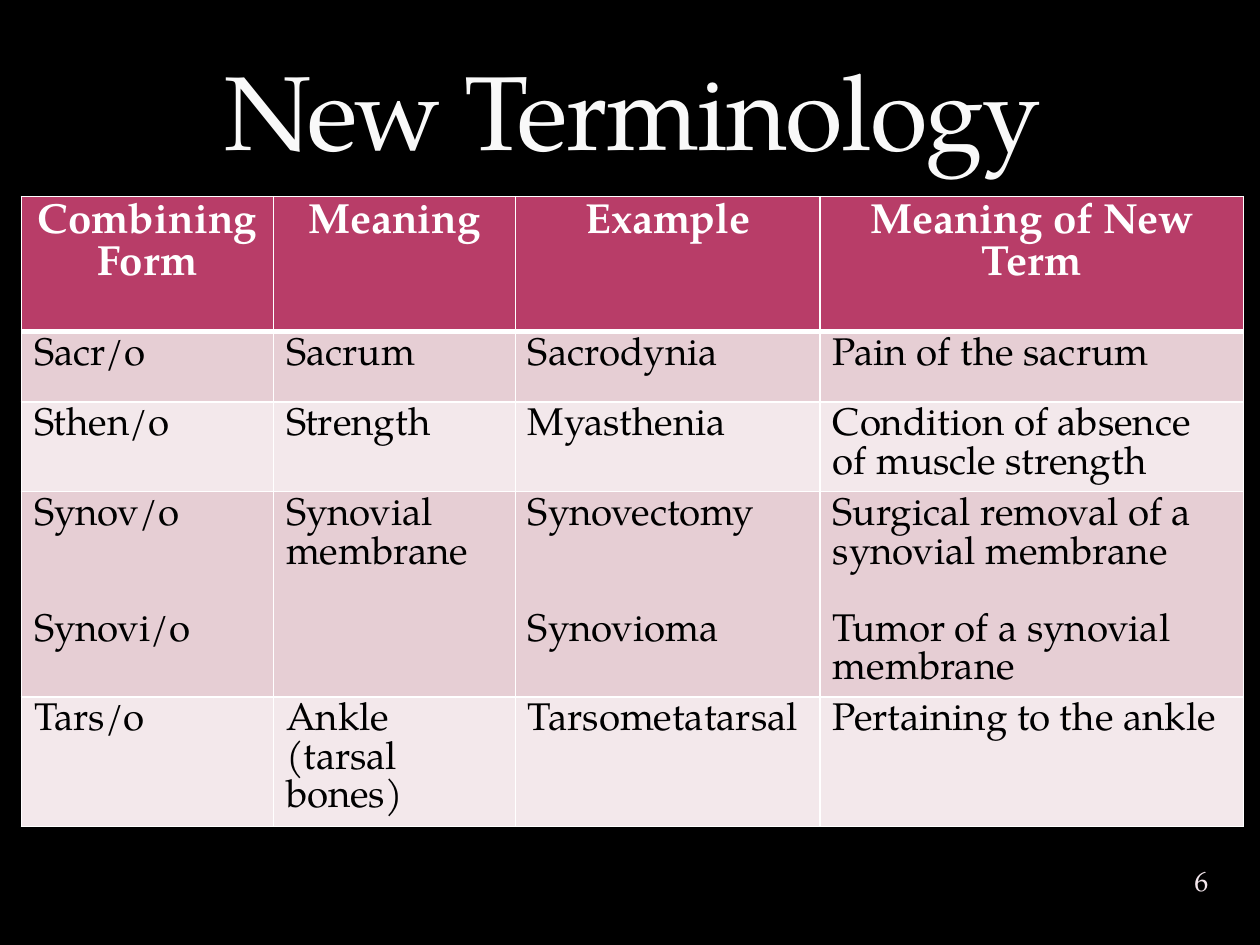
from pptx import Presentation, util as u
from pptx.dml.color import RGBColor
from pptx.enum import text
from pptx.oxml import parse_xml
from pptx.oxml.ns import nsdecls

HEAD = ["Combining Form", "Meaning", "Example", "Meaning of New Term"]
ROWS = [
    ["Sacr/o", "Sacrum", "Sacrodynia", "Pain of the sacrum"],
    ["Sthen/o", "Strength", "Myasthenia", "Condition of absence of muscle strength"],
    [("Synov/o", "Synovi/o", 2), "Synovial membrane",
     ("Synovectomy", "Synovioma", 2),
     ("Surgical removal of a synovial membrane", "Tumor of a synovial membrane", 1)],
    ["Tars/o", "Ankle (tarsal bones)", "Tarsometatarsal", "Pertaining to the ankle"],
]
COLS = [2, 1.92, 2.42, 3.36]
HIGH = [1.07, 0.56, 0.71, 1.63, 1.03]
THEME = {
    "font": "TeX Gyre Pagella", "back": "000000", "head": "B83D68",
    "bands": ["E6CED4", "F3E8EB"], "line": "FFFFFF",
    "title": {"size": 60, "color": "F9F9F9"},
    "top": {"size": 24, "color": "FFFFFF", "bold": True},
    "body": {"size": 22, "color": "000000", "bold": False},
    "page": {"size": 16, "color": "F4E7ED"},
}
MID = text.PP_ALIGN.CENTER


def put(obj, vals):
    for key, val in vals.items():
        setattr(obj, key, val)


def write(frame, words, style, align=None):
    *parts, gap = words if isinstance(words, tuple) else (words, 0)
    for i, part in enumerate(parts):
        para = frame.add_paragraph() if i else frame.paragraphs[0]
        put(para, {"alignment": align, "line_spacing": u.Pt(style["size"])})
        if i:
            para.space_before = u.Pt(gap * style["size"])
        run = para.add_run()
        run.text = part
        put(run.font, {"name": THEME["font"], "size": u.Pt(style["size"]),
                       "bold": style.get("bold")})
        run.font.color.rgb = RGBColor.from_string(style["color"])
    return run


def paint(fill, color):
    fill.solid()
    fill.fore_color.rgb = RGBColor.from_string(color)


def edge(cell, row):
    props = cell._tc.get_or_add_tcPr()
    sides = {"lnL": 1, "lnR": 1, "lnT": 3 if row == 1 else 1, "lnB": 1 if row else 3}
    for i, (side, wide) in enumerate(sides.items()):
        props.insert(i, parse_xml(
            f'<a:{side} {nsdecls("a")} w="{u.Pt(wide)}"><a:solidFill>'
            f'<a:srgbClr val="{THEME["line"]}"/></a:solidFill></a:{side}>'))


def label(slide, words, style, area, anchor, inset):
    frame = slide.shapes.add_textbox(*map(u.Inches, area)).text_frame
    put(frame, {"word_wrap": True, "vertical_anchor": anchor})
    put(frame, {f"margin_{side}": u.Inches(inset)
                for side in ("left", "right", "top", "bottom")})
    return write(frame, words, style, MID)


def grid(slide):
    area = (0.17, 1.56, sum(COLS), sum(HIGH))
    table = slide.shapes.add_table(len(HIGH), len(COLS), *map(u.Inches, area)).table
    for col, wide in zip(table.columns, COLS):
        col.width = u.Inches(wide)
    for r, (line, high) in enumerate(zip([HEAD] + ROWS, HIGH)):
        table.rows[r].height = u.Inches(high)
        for c, words in enumerate(line):
            cell = table.cell(r, c)
            paint(cell.fill, THEME["bands"][(r - 1) % 2] if r else THEME["head"])
            edge(cell, r)
            write(cell.text_frame, words, THEME["body" if r else "top"],
                  None if r else MID)


def main():
    deck = Presentation()
    put(deck, {"slide_width": u.Inches(10), "slide_height": u.Inches(7.5)})
    slide = deck.slides.add_slide(deck.slide_layouts[6])
    paint(slide.background.fill, THEME["back"])
    grid(slide)
    label(slide, "6", THEME["page"], (9.2, 6.76, 0.67, 0.5),
          text.MSO_ANCHOR.MIDDLE, 0)
    run = label(slide, "New Terminology", THEME["title"], (0.52, 0.08, 9, 1.33),
                text.MSO_ANCHOR.BOTTOM, 0.05)
    run.font._element.set("spc", "-100")
    deck.save("out.pptx")


if __name__ == "__main__":
    main()
